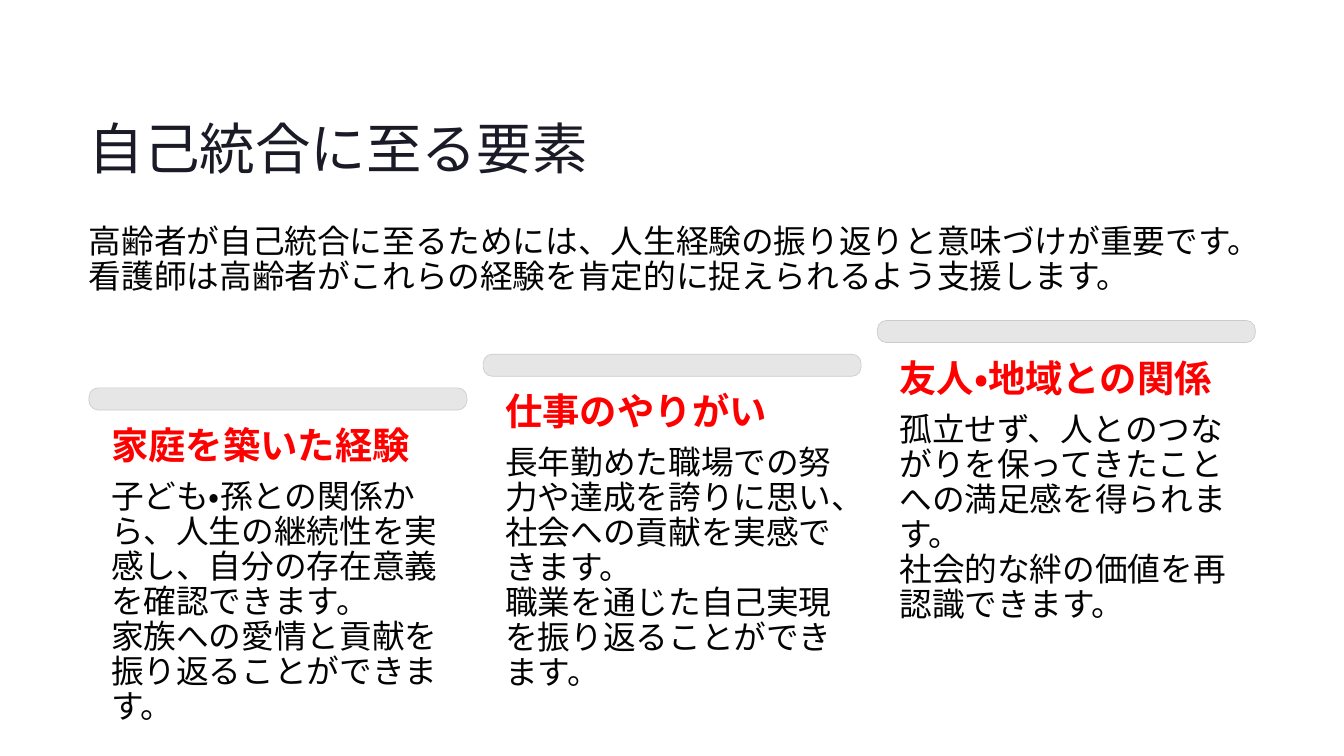
from pptx import Presentation
from pptx import util as u
from pptx.dml import color
from pptx.enum import lang, shapes, text

TITLE = {"name": "Inter", "size": u.Pt(47.5), "bold": False}
HEAD = {"name": "Inter", "size": u.Pt(32), "bold": True}
BODY = {"name": "Cabin", "size": u.Pt(28), "bold": False}
FRAME = {
    "margin_left": 0, "margin_top": 0, "margin_right": 0, "margin_bottom": 0,
    "auto_size": text.MSO_AUTO_SIZE.NONE,
    "vertical_anchor": text.MSO_ANCHOR.TOP,
}
INTRO = (
    "高齢者が自己統合に至るためには、人生経験の振り返りと意味づけが重要です。"
    "看護師は高齢者がこれらの経験を肯定的に捉えられるよう支援します。"
)
STEPS = [
    ("家庭を築いた経験", [
        "子ども・孫との関係から、人生の継続性を実感し、自分の存在意義を確認できます。",
        "家族への愛情と貢献を振り返ることができます。"]),
    ("仕事のやりがい", [
        "長年勤めた職場での努力や達成を誇りに思い、社会への貢献を実感できます。",
        "職業を通じた自己実現を振り返ることができます。"]),
    ("友人・地域との関係", [
        "孤立せず、人とのつながりを保ってきたことへの満足感を得られます。",
        "社会的な絆の価値を再認識できます。"]),
]
LEFT, TOP = 2.69, 11.73
PITCH, RISE = 11.92, 1.02
INSET = 0.67


def tint(fmt, code):
    fmt.solid()
    fmt.fore_color.rgb = color.RGBColor.from_string(code)


def style(item, values):
    for name, value in values.items():
        setattr(item, name, value)


def place(shape, x, y, w, h):
    style(shape, {"left": u.Cm(x), "top": u.Cm(y),
                  "width": u.Cm(w), "height": u.Cm(h)})


def write(shape, lines, font, code, pitch, wrap):
    frame = shape.text_frame
    style(frame, FRAME)
    frame.word_wrap = wrap
    frame.text = "\n".join(lines)
    for para in frame.paragraphs:
        style(para, {"alignment": text.PP_ALIGN.LEFT, "line_spacing": u.Pt(pitch)})
        for run in para.runs:
            style(run.font, font)
            run.font.language_id = lang.MSO_LANGUAGE_ID.JAPANESE
            tint(run.font.fill, code)


def label(slide, box, lines, font, code, pitch, wrap):
    shape = slide.shapes.add_textbox(*map(u.Cm, box))
    write(shape, lines, font, code, pitch, wrap)


def bar(slide, x, y):
    shape = slide.shapes.add_shape(
        shapes.MSO_SHAPE.ROUNDED_RECTANGLE, *map(u.Cm, (x, y, 11.43, 0.67)))
    shape.adjustments[0] = 0.42
    shape.shadow.inherit = False
    tint(shape.fill, "E6E6E6")
    tint(shape.line.fill, "CCCCCC")
    shape.line.width = u.Pt(0.6)


def step(slide, rank, head, lines):
    x, y = LEFT + rank * PITCH, TOP - rank * RISE
    bar(slide, x, y)
    label(slide, (x + INSET, y + 1.35, 8.38, 1.04), [head], HEAD, "FF0000", 29.5, False)
    label(slide, (x + INSET, y + 2.79, 10.08, 4.29), lines, BODY, "030303", 30, True)


def main():
    deck = Presentation()
    style(deck, {"slide_width": u.Cm(40.64), "slide_height": u.Cm(22.86)})
    slide = deck.slides.add_slide(deck.slide_layouts.get_by_name("Title Only"))
    title = slide.shapes.title
    place(title, LEFT, 3.38, 16.76, 2.11)
    write(title, ["自己統合に至る要素"], TITLE, "1B1B27", 59, False)
    label(slide, (LEFT, 6.81, 35.28, 2.16), [INTRO], BODY, "030303", 30, True)
    for rank, (head, lines) in enumerate(STEPS):
        step(slide, rank, head, lines)
    deck.save("out.pptx")


if __name__ == "__main__":
    main()
